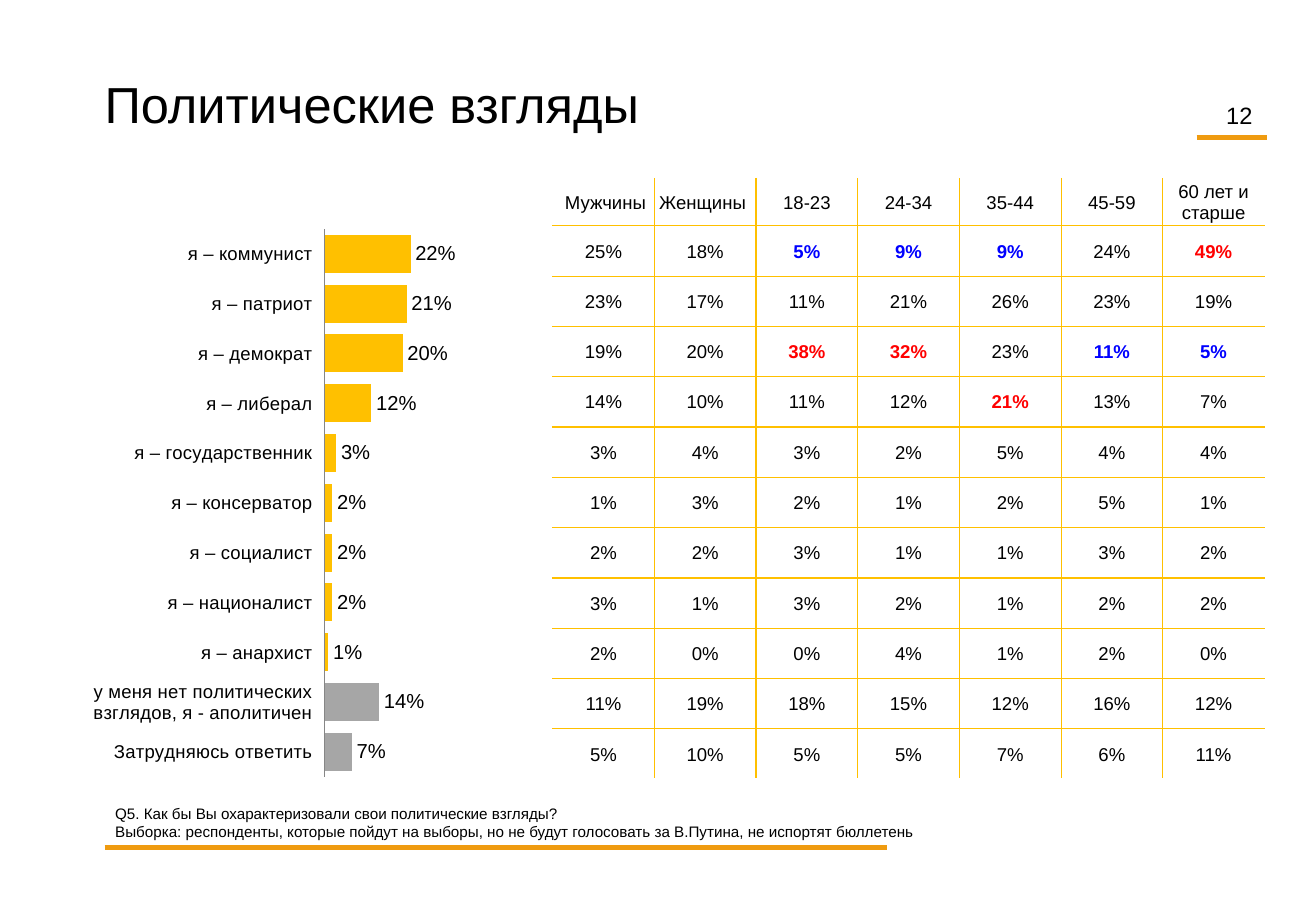
from lxml.etree import SubElement
from pptx import Presentation
from pptx.chart.data import CategoryChartData
from pptx.dml.color import RGBColor
from pptx.enum.chart import XL_CHART_TYPE, XL_LABEL_POSITION, XL_TICK_LABEL_POSITION, XL_TICK_MARK
from pptx.enum.shapes import MSO_CONNECTOR
from pptx.enum.text import MSO_ANCHOR, PP_ALIGN
from pptx.oxml import parse_xml
from pptx.oxml.ns import nsdecls, qn
from pptx.util import Pt

COLORS = {
    "text": "000000", "accent": "EF9B10", "bar": "FFC000", "neutral": "A6A6A6",
    "axis": "868686", "grid": "FFC000", "high": "FF0000", "low": "0000FF",
}
FONT = "Arial"
PERCENT = "#,##0%"

VIEWS = {
    "я – коммунист": 0.22,
    "я – патриот": 0.21,
    "я – демократ": 0.20,
    "я – либерал": 0.12,
    "я – государственник": 0.03,
    "я – консерватор": 0.02,
    "я – социалист": 0.02,
    "я – националист": 0.02,
    "я – анархист": 0.01,
    "у меня нет политических взглядов, я - аполитичен": 0.14,
    "Затрудняюсь ответить": 0.07,
}
NEUTRAL_VIEWS = (9, 10)

GROUPS = ["Мужчины", "Женщины ", "18-23", "24-34", "35-44", "45-59", "60 лет и старше"]
SHARES = [
    [25, 18, 5, 9, 9, 24, 49],
    [23, 17, 11, 21, 26, 23, 19],
    [19, 20, 38, 32, 23, 11, 5],
    [14, 10, 11, 12, 21, 13, 7],
    [3, 4, 3, 2, 5, 4, 4],
    [1, 3, 2, 1, 2, 5, 1],
    [2, 2, 3, 1, 1, 3, 2],
    [3, 1, 3, 2, 1, 2, 2],
    [2, 0, 0, 4, 1, 2, 0],
    [11, 19, 18, 15, 12, 16, 12],
    [5, 10, 5, 5, 7, 6, 11],
]
# (table row, column) of the cells that stand out
HIGHLIGHTS = {
    "high": [(1, 6), (3, 2), (3, 3), (4, 4)],
    "low": [(1, 2), (1, 3), (1, 4), (3, 5), (3, 6)],
}
CELL_COLORS = {place: name for name, places in HIGHLIGHTS.items() for place in places}


def rgb(name):
    return RGBColor.from_string(COLORS[name])


def style_font(font, size, color="text", bold=False):
    for attribute, value in {"name": FONT, "size": Pt(size), "bold": bold}.items():
        setattr(font, attribute, value)
    font.color.rgb = rgb(color)


def add_text(slide, box, lines, size, align=PP_ALIGN.LEFT, side_inset=7.2):
    frame = slide.shapes.add_textbox(*map(Pt, box)).text_frame
    settings = {"word_wrap": True, "margin_left": Pt(side_inset), "margin_right": Pt(side_inset)}
    for attribute, value in settings.items():
        setattr(frame, attribute, value)
    frame.text = "\n".join(lines)
    for paragraph in frame.paragraphs:
        paragraph.alignment = align
        style_font(paragraph.font, size)


def add_rule(slide, left, top, width):
    line = slide.shapes.add_connector(
        MSO_CONNECTOR.STRAIGHT, Pt(left), Pt(top), Pt(left + width), Pt(top))
    line.line.color.rgb = rgb("accent")
    line.line.width = Pt(3)
    SubElement(line.element.spPr, qn("a:effectLst"))


def set_plot_area(chart, **fractions):
    """Fix the inner plot area as fractions of the chart."""
    plot_area = chart.element.find(".//" + qn("c:plotArea"))
    for layout in plot_area.findall(qn("c:layout")):
        plot_area.remove(layout)
    sizes = "".join(f'<c:{name} val="{value}"/>' for name, value in fractions.items())
    plot_area.insert(0, parse_xml(
        f'<c:layout {nsdecls("c")}><c:manualLayout><c:layoutTarget val="inner"/>'
        f'<c:xMode val="edge"/><c:yMode val="edge"/>{sizes}</c:manualLayout></c:layout>'))


def add_views_chart(slide, box):
    data = CategoryChartData(number_format=PERCENT)
    data.categories = list(VIEWS)
    data.add_series("Series 1", list(VIEWS.values()))
    chart = slide.shapes.add_chart(XL_CHART_TYPE.BAR_CLUSTERED, *map(Pt, box), data).chart
    chart.has_legend = chart.has_title = False
    style_font(chart.font, 11)
    set_plot_area(chart, x=0.37, y=0.01, w=0.63, h=0.99)

    category_axis = chart.category_axis
    axis_settings = {
        "reverse_order": True, "has_major_gridlines": False,
        "major_tick_mark": XL_TICK_MARK.NONE, "minor_tick_mark": XL_TICK_MARK.NONE,
        "tick_label_position": XL_TICK_LABEL_POSITION.LOW,
    }
    for attribute, value in axis_settings.items():
        setattr(category_axis, attribute, value)
    category_axis.format.line.color.rgb = rgb("axis")
    category_axis.format.line.width = Pt(0.75)
    style_font(category_axis.tick_labels.font, 11)

    value_settings = {
        "minimum_scale": 0, "maximum_scale": 1, "major_unit": 0.5,
        "has_major_gridlines": False, "visible": False,
    }
    for attribute, value in value_settings.items():
        setattr(chart.value_axis, attribute, value)

    plot = chart.plots[0]
    plot.gap_width = 31
    plot.vary_by_categories = False
    series = plot.series[0]
    bars = [series] + [series.points[index] for index in NEUTRAL_VIEWS]
    for bar, color in zip(bars, ["bar", "neutral", "neutral"]):
        bar.format.fill.solid()
        bar.format.fill.fore_color.rgb = rgb(color)
    labels = series.data_labels
    label_settings = {
        "show_value": True, "number_format": PERCENT, "number_format_is_linked": False,
        "position": XL_LABEL_POSITION.OUTSIDE_END,
    }
    for attribute, value in label_settings.items():
        setattr(labels, attribute, value)
    style_font(labels.font, 12)


def add_cell_borders(cell, row, column, last_row, last_column):
    """Rule the inner edges, with a heavier line between sex and age columns."""
    edges = {
        "L": (column > 0, column == 2),
        "R": (column < last_column, column == 1),
        "T": (row > 0, False),
        "B": (row < last_row, False),
    }
    properties = cell._tc.get_or_add_tcPr()
    for side, (inner, heavy) in edges.items():
        if inner:
            line = SubElement(properties, qn(f"a:ln{side}"), w=str(Pt(1.5 if heavy else 0.75)))
            fill = SubElement(line, qn("a:solidFill"))
            SubElement(fill, qn("a:srgbClr"), val=COLORS["grid"])


def add_groups_table(slide, box, header_height=28.08):
    rows = [GROUPS] + [[f"{share}%" for share in shares] for shares in SHARES]
    width, height = box[2:]
    table = slide.shapes.add_table(len(rows), len(GROUPS), *map(Pt, box)).table
    table.first_row = table.horz_banding = False
    for column in table.columns:
        column.width = Pt(width / len(GROUPS))
    for index, row in enumerate(table.rows):
        row.height = Pt((height - header_height) / len(SHARES) if index else header_height)
    cell_settings = {
        "margin_left": Pt(0.72), "margin_right": Pt(0.72), "margin_top": Pt(0.72),
        "margin_bottom": 0, "vertical_anchor": MSO_ANCHOR.MIDDLE,
    }
    for row, texts in enumerate(rows):
        for column, text in enumerate(texts):
            cell = table.cell(row, column)
            for attribute, value in cell_settings.items():
                setattr(cell, attribute, value)
            add_cell_borders(cell, row, column, len(rows) - 1, len(GROUPS) - 1)
            cell.fill.background()
            cell.text = text
            paragraph = cell.text_frame.paragraphs[0]
            paragraph.alignment = PP_ALIGN.CENTER
            color = CELL_COLORS.get((row, column), "text")
            style_font(paragraph.runs[0].font, 11, color, color != "text")
    first_header = table.cell(0, 0).text_frame.paragraphs[0]
    first_header.alignment = PP_ALIGN.LEFT
    first_header._p.get_or_add_pPr().set("indent", str(Pt(6.48)))


def main():
    presentation = Presentation()
    presentation.slide_width, presentation.slide_height = Pt(780), Pt(540)
    slide = presentation.slides.add_slide(presentation.slide_layouts[6])
    add_rule(slide, 62, 502.5, 463.6)
    add_rule(slide, 709.2, 81.4, 41.8)
    add_text(slide, (696.2, 56.2, 53.3, 20.9), ["12"], 14, PP_ALIGN.RIGHT)
    add_text(slide, (61.2, 473, 692, 28.8), [
        "Q5. Как бы Вы охарактеризовали свои политические взгляды?",
        "Выборка: респонденты, которые пойдут на выборы, но не будут голосовать "
        "за В.Путина, не испортят бюллетень",
    ], 9)
    add_text(slide, (62, 39.6, 646.6, 43.9), ["Политические взгляды"], 30, side_inset=0)
    add_views_chart(slide, (55.4, 132.5, 368.6, 328.3))
    add_groups_table(slide, (327.6, 105.8, 422, 356.4))
    presentation.save("out.pptx")


if __name__ == "__main__":
    main()
